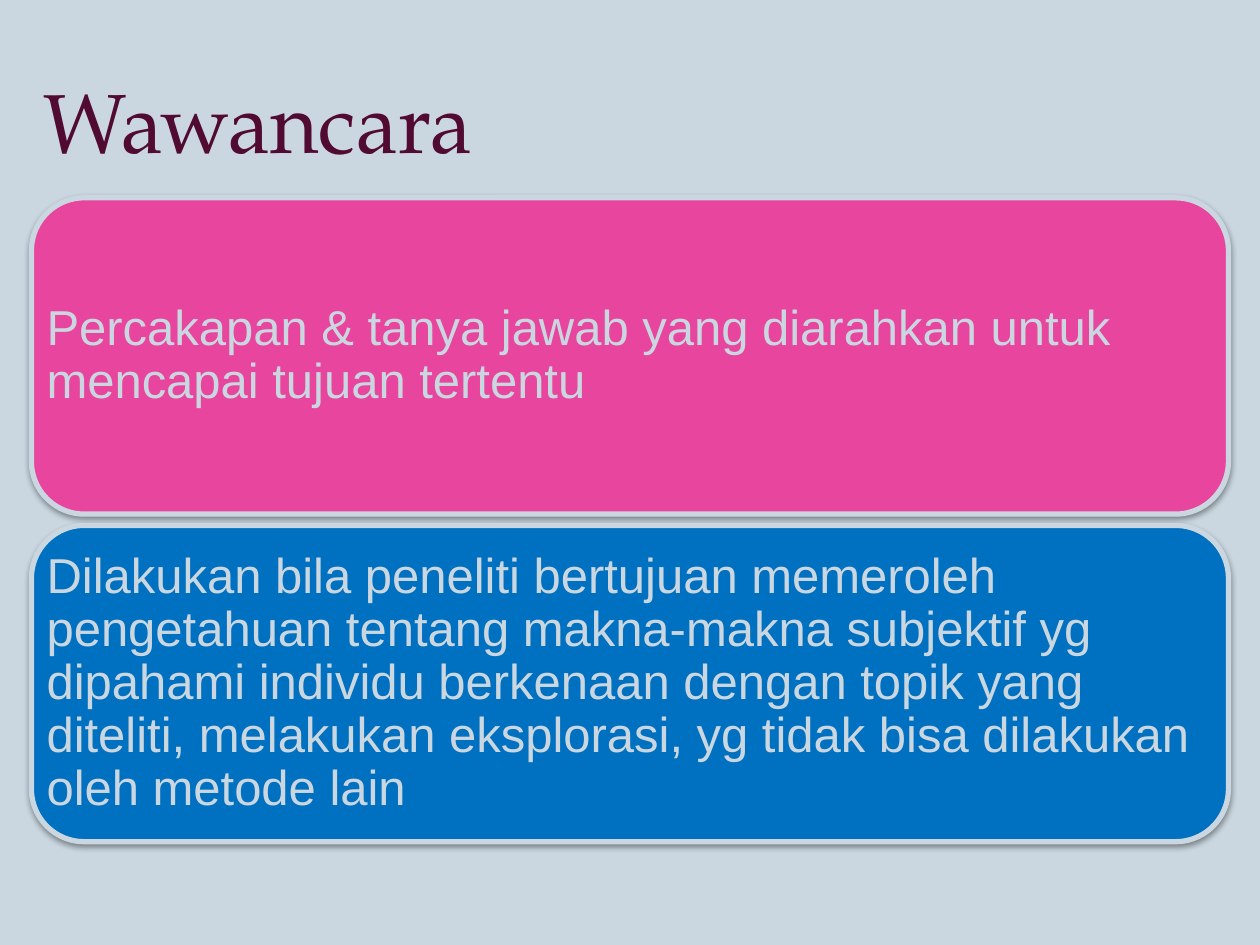
from lxml import etree
from pptx import Presentation
from pptx.dml.color import RGBColor
from pptx.enum import shapes, text
from pptx.oxml import ns
from pptx.util import Inches, Pt

COLORS = {
    "paper": "CAD7E0",
    "title": "510A31",
    "pink": "E8459E",
    "blue": "0070C0",
    "shadow": "000000",
}
POINTS = [
    ("pink", "Percakapan & tanya jawab yang diarahkan untuk mencapai tujuan tertentu"),
    ("blue", "Dilakukan bila peneliti bertujuan memeroleh pengetahuan tentang "
             "makna-makna subjektif yg dipahami individu berkenaan dengan topik yang "
             "diteliti, melakukan eksplorasi, yg tidak bisa dilakukan oleh metode lain"),
]


def color(name):
    """Return the named colour."""
    return RGBColor.from_string(COLORS[name])


def add_shadow(shape):
    """Give a shape a soft shadow that falls straight down."""
    shape.shadow.inherit = False
    effects = shape._element.spPr.find(ns.qn("a:effectLst"))
    shadow = etree.SubElement(effects, ns.qn("a:outerShdw"), blurRad=str(Pt(3.1)),
                              dist=str(Pt(1.6)), dir="5400000", rotWithShape="0")
    tone = etree.SubElement(shadow, ns.qn("a:srgbClr"), val=COLORS["shadow"])
    etree.SubElement(tone, ns.qn("a:alpha"), val="38000")


def write(shape, wording, font, size, tone, inset, spacing):
    """Write one left-aligned, vertically centred paragraph in a shape."""
    frame = shape.text_frame
    frame.word_wrap = True
    frame.vertical_anchor = text.MSO_ANCHOR.MIDDLE
    frame.margin_left = frame.margin_right = Inches(inset)
    frame.margin_top = frame.margin_bottom = Inches(inset)
    para = frame.paragraphs[0]
    para.alignment = text.PP_ALIGN.LEFT
    para.line_spacing = spacing
    span = para.add_run()
    span.text = wording
    span.font.name = font
    span.font.size = Pt(size)
    span.font.color.rgb = color(tone)


def add_title(page, left, top, width, height):
    """Place the slide title in the given box."""
    box = page.shapes.add_textbox(Inches(left), Inches(top), Inches(width), Inches(height))
    write(box, "Wawancara", "TeX Gyre Pagella", 48, "title", 0.1, 1.0)


def add_points(page, left, top, width, height, gap):
    """Stack the rounded panels evenly in the given box."""
    panel_height = (height - gap * (len(POINTS) - 1)) / len(POINTS)
    for index, (fill, wording) in enumerate(POINTS):
        panel_top = top + index * (panel_height + gap)
        panel = page.shapes.add_shape(
            shapes.MSO_SHAPE.ROUNDED_RECTANGLE, Inches(left), Inches(panel_top),
            Inches(width), Inches(panel_height))
        panel.fill.solid()
        panel.fill.fore_color.rgb = color(fill)
        panel.line.color.rgb = color("paper")
        panel.line.width = Pt(3)
        add_shadow(panel)
        box = page.shapes.add_textbox(
            Inches(left), Inches(panel_top), Inches(width), Inches(panel_height))
        write(box, wording, "Arial", 28, "paper", 0.12, 0.9)


def main():
    """Build and save the slide."""
    deck = Presentation()
    deck.slide_width, deck.slide_height = Inches(10), Inches(7.5)
    page = deck.slides.add_slide(deck.slide_layouts[6])
    page.background.fill.solid()
    page.background.fill.fore_color.rgb = color("paper")
    add_points(page, 0.25, 1.57, 9.5, 5.11, 0.09)
    add_title(page, 0.25, 0.33, 9.5, 1.25)
    deck.save("out.pptx")


if __name__ == "__main__":
    main()
